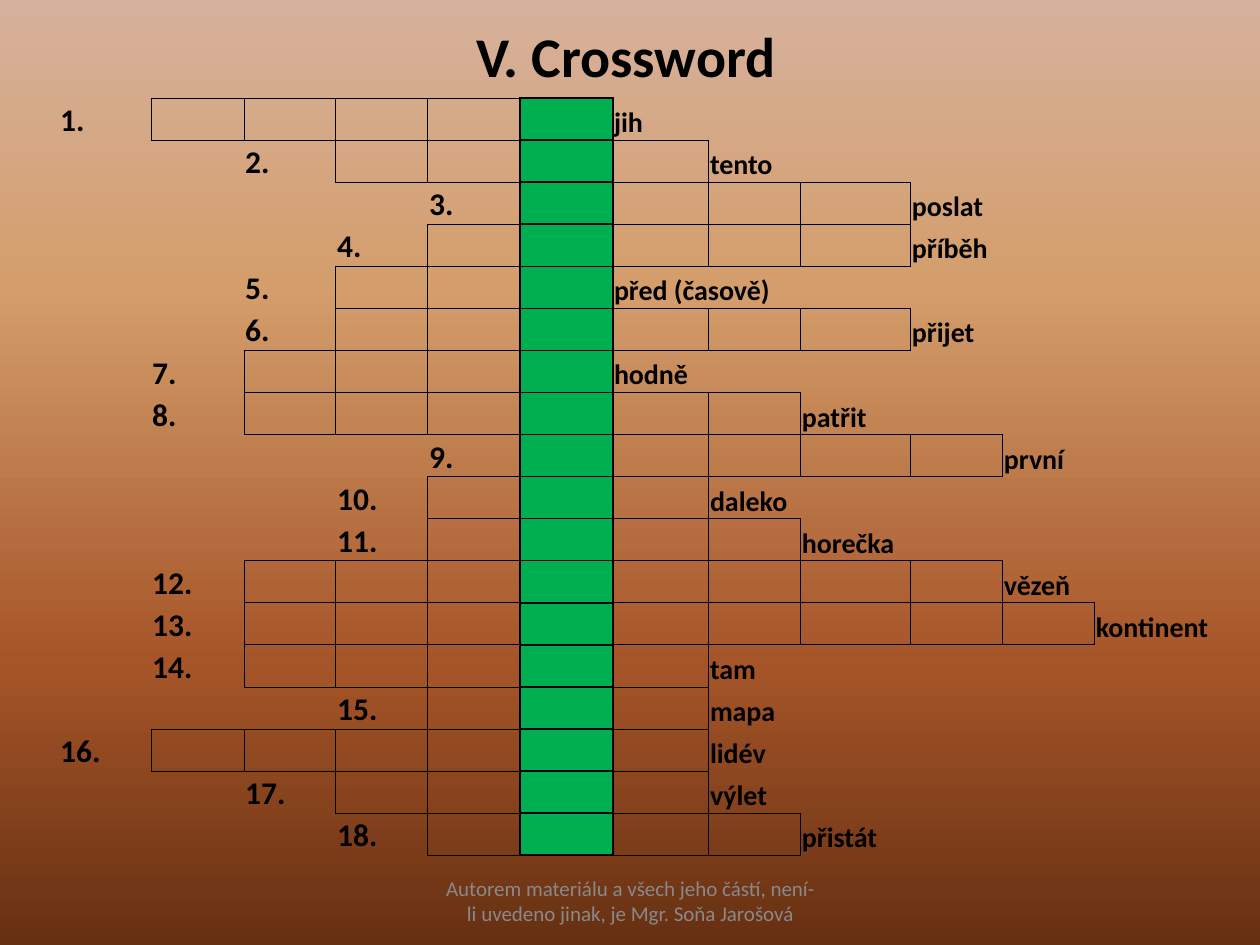
from lxml import etree
from pptx import Presentation
from pptx import util as u
from pptx.dml.color import RGBColor
from pptx.enum import text
from pptx.oxml import ns

BLACK = RGBColor(0x00, 0x00, 0x00)
GREEN = RGBColor(0x00, 0xB0, 0x50)
GREY = RGBColor(0x89, 0x89, 0x89)
SKY = [(0, RGBColor(0xD6, 0xB1, 0x9C)), (30, RGBColor(0xD4, 0x9E, 0x6C)),
       (70, RGBColor(0xA6, 0x55, 0x28)), (100, RGBColor(0x66, 0x30, 0x12))]

SCALE = 914400 / 126  # EMU per px
PLAIN = "{2D5ABB26-0587-4C30-8999-92F81FD0307C}"  # no style, no grid
KEY = 5  # column of the solution

# Column of the number, column of the clue, clue; letters go between
WORDS = [
    (0, 6, "jih"), (2, 7, "tento"), (4, 9, "poslat"), (3, 9, "příběh"),
    (2, 6, "před (časově)"), (2, 9, "přijet"), (1, 6, "hodně"),
    (1, 8, "patřit"), (4, 10, "první"), (3, 7, "daleko"),
    (3, 8, "horečka"), (1, 10, "vězeň"), (1, 11, "kontinent"),
    (1, 7, "tam"), (3, 7, "mapa"), (0, 7, "lidév"), (2, 7, "výlet"),
    (3, 8, "přistát"),
]
COLS = [92, 93, 92, 92, 92, 93, 96, 92, 110, 92, 92, 135]
WIDE = 4  # row whose clue spans two columns


def px(n):
    return u.Emu(round(n * SCALE))


def line(row, col):
    """Border width in points that the cell at row, col asks for."""
    if not 0 <= row < len(WORDS):
        return 0
    first, last, _ = WORDS[row]
    if not first < col < last:
        return 0
    return 1 if col == KEY else 0.5


class Deck:
    font = "Calibri"

    def __init__(self, wide, high):
        self.prs = Presentation()
        self.prs.slide_width, self.prs.slide_height = px(wide), px(high)
        self.slide = self.prs.slides.add_slide(self.prs.slide_layouts[6])

    def back(self, stops):
        fill = self.slide.background.fill
        fill.gradient()
        fill.gradient_angle = 270
        group = self.slide.element.find(".//" + ns.qn("a:gsLst"))
        for old in list(group):
            group.remove(old)
        for pos, tint in stops:
            stop = etree.SubElement(group, ns.qn("a:gs"), pos=str(pos * 1000))
            etree.SubElement(stop, ns.qn("a:srgbClr"), val=str(tint))

    def style(self, par, size, tint, bold):
        for run in par.runs:
            font = run.font
            font.name, font.size, font.bold = self.font, u.Pt(size), bold
            font.color.rgb = tint

    def label(self, x, y, w, h, words, size, tint, bold=False):
        frame = self.slide.shapes.add_textbox(px(x), px(y), px(w), px(h)).text_frame
        frame.word_wrap = True
        frame.vertical_anchor = text.MSO_ANCHOR.MIDDLE
        frame.text = words
        par = frame.paragraphs[0]
        par.alignment = text.PP_ALIGN.CENTER
        self.style(par, size, tint, bold)

    def table(self, x, y, cols, rows, high):
        grid = self.slide.shapes.add_table(
            rows, len(cols), px(x), px(y), px(sum(cols)), px(high)).table
        grid.first_row = grid.horz_banding = False
        grid._tbl.tblPr.find(ns.qn("a:tableStyleId")).text = PLAIN
        for col, wide in zip(grid.columns, cols):
            col.width = px(wide)
        for row in grid.rows:
            row.height = px(high / rows)
        return grid

    def cell(self, cell, words, size, sides, tint=None):
        cell.margin_left = cell.margin_right = cell.margin_top = u.Inches(0.01)
        cell.margin_bottom = 0
        cell.vertical_anchor = text.MSO_ANCHOR.BOTTOM
        if words:
            cell.text_frame.text = words
            self.style(cell.text_frame.paragraphs[0], size, BLACK, True)
        for side, width in sides.items():
            self.edge(cell, side, width)
        if tint is None:
            cell.fill.background()
        else:
            cell.fill.solid()
            cell.fill.fore_color.rgb = tint

    def edge(self, cell, side, width):
        props = cell._tc.get_or_add_tcPr()
        ln = etree.SubElement(props, ns.qn("a:ln" + side), w=str(u.Pt(width)))
        if width:
            fill = etree.SubElement(ln, ns.qn("a:solidFill"))
            etree.SubElement(fill, ns.qn("a:srgbClr"), val=str(BLACK))
        else:
            etree.SubElement(ln, ns.qn("a:noFill"))


def main():
    deck = Deck(1260, 945)
    deck.back(SKY)

    # Title
    deck.label(59, 20, 1134, 71, "V. Crossword", 32, BLACK, True)

    # Crossword grid: neighbours share the heavier border
    grid = deck.table(59, 98, COLS, len(WORDS), 758)
    for r, (first, last, clue) in enumerate(WORDS):
        for c in range(len(COLS)):
            near = {"L": (r, c - 1), "R": (r, c + 1),
                    "T": (r - 1, c), "B": (r + 1, c)}
            sides = {s: max(line(r, c), line(*at)) for s, at in near.items()}
            words = {first: f"{r + 1}.", last: clue}.get(c, "")
            deck.cell(grid.cell(r, c), words, 18 if c == first else 16,
                      sides, GREEN if c == KEY else None)
    start = WORDS[WIDE][1]
    grid.cell(WIDE, start).merge(grid.cell(WIDE, start + 1))

    # Footer
    deck.label(431, 876, 399, 50, "Autorem materiálu a všech jeho částí, "
               "není-li uvedeno jinak, je Mgr. Soňa Jarošová", 12, GREY)

    deck.prs.save("out.pptx")


if __name__ == "__main__":
    main()
